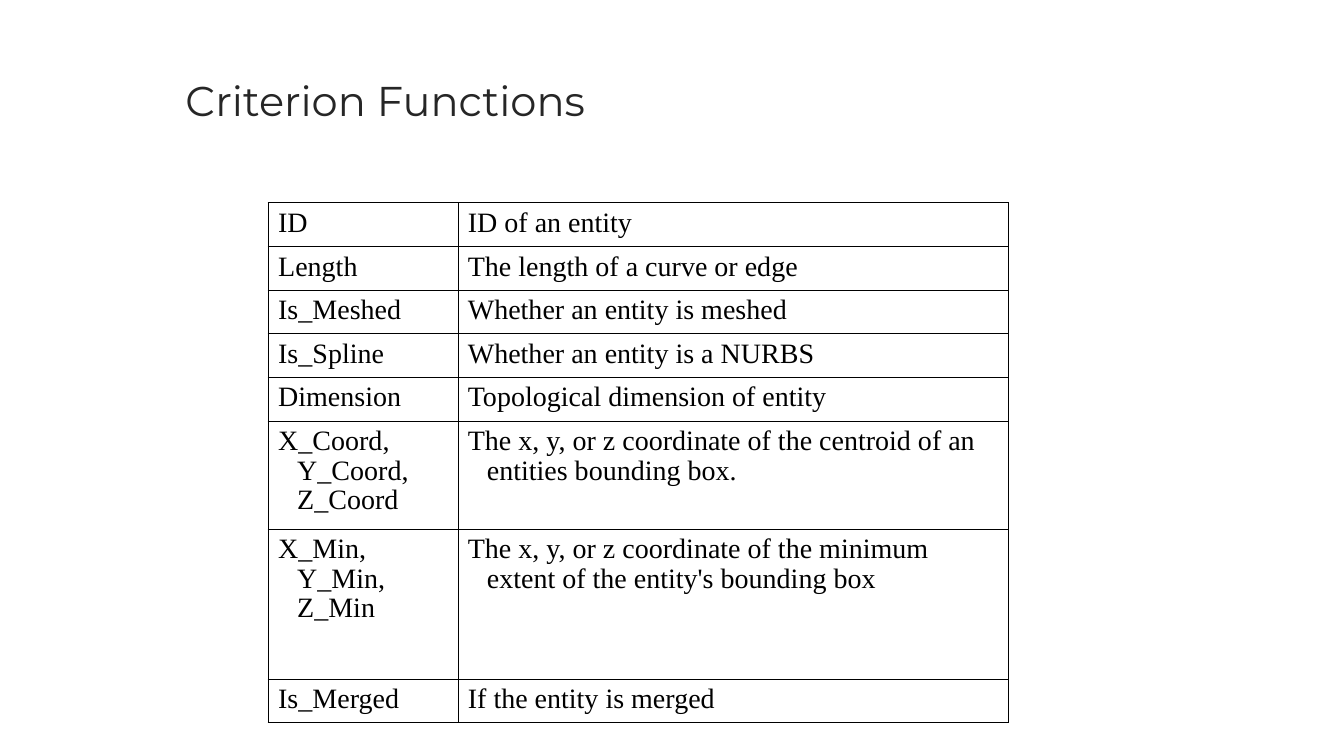
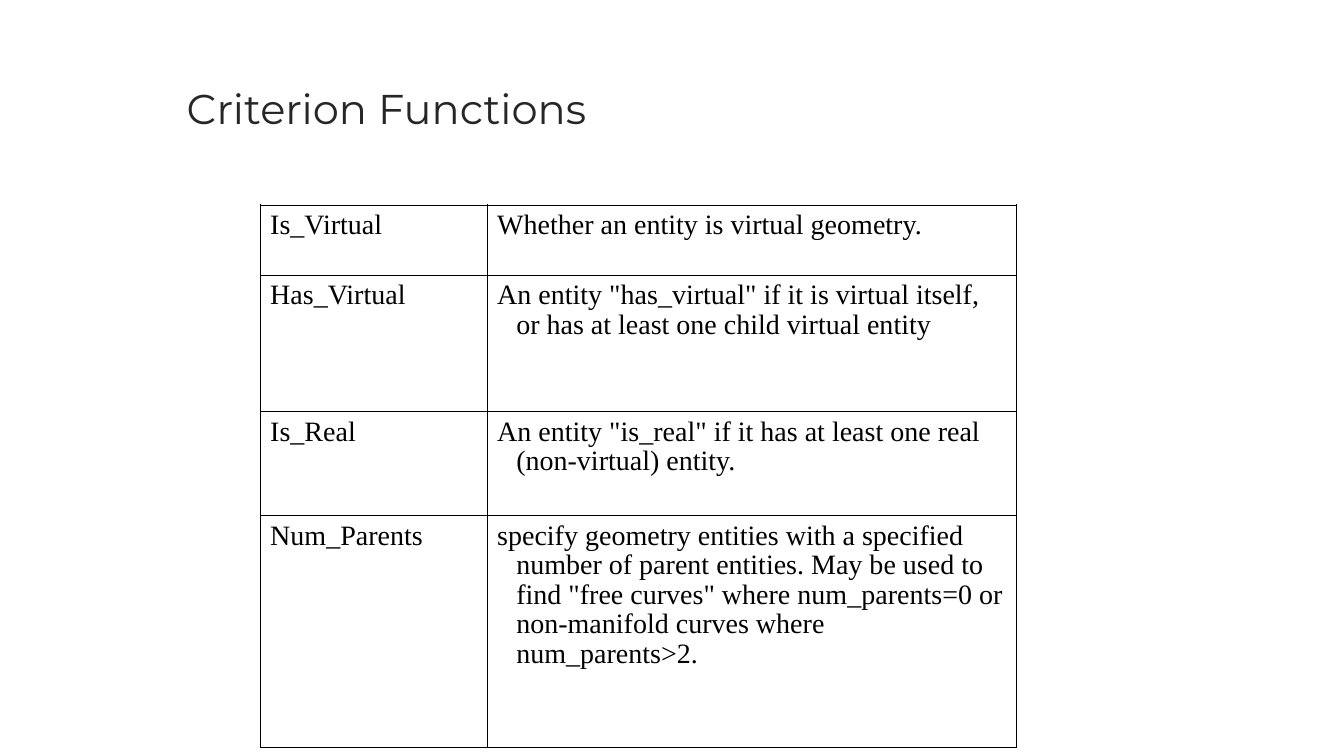
from lxml.etree import SubElement
from pptx import Presentation
from pptx.dml.color import RGBColor
from pptx.enum.text import MSO_ANCHOR, MSO_AUTO_SIZE, PP_ALIGN
from pptx.oxml.ns import qn
from pptx.util import Cm, Pt

TITLE_FONT, TITLE_SIZE, TITLE_COLOR = "Montserrat", 29.7, "262626"
CELL_FONT, CELL_SIZE, CELL_COLOR = "Times New Roman", 20, "000000"
OUTER_LINE, INNER_LINE = 1.08, 0.45
HANGING_INDENT = Cm(0.48)

GENERAL_CRITERIA = [
    ("ID", "ID of an entity", 1.1),
    ("Length", "The length of a curve or edge", 1.1),
    ("Is_Meshed", "Whether an entity is meshed", 1.1),
    ("Is_Spline", "Whether an entity is a NURBS", 1.1),
    ("Dimension", "Topological dimension of entity", 1.1),
    ("X_Coord, Y_Coord, Z_Coord",
     "The x, y, or z coordinate of the centroid of an entities bounding box.", 2.72),
    ("X_Min, Y_Min, Z_Min",
     "The x, y, or z coordinate of the minimum extent of the entity's bounding box", 3.78),
    ("Is_Merged", "If the entity is merged", 1.1),
]
VIRTUAL_CRITERIA = [
    ("Is_Virtual", "Whether an entity is virtual geometry.", 1.77),
    ("Has_Virtual",
     'An entity "has_virtual" if it is virtual itself, '
     "or has at least one child virtual entity", 3.43),
    ("Is_Real", 'An entity "is_real" if it has at least one real (non-virtual) entity.', 2.62),
    ("Num_Parents",
     "specify geometry entities with a specified number of parent entities. "
     'May be used to find "free curves" where num_parents=0 or non-manifold '
     "curves where num_parents>2.", 5.85),
]


def color(value):
    return RGBColor.from_string(value)


def add_run(paragraph, text, font, size, hex_color):
    run = paragraph.add_run()
    run.text = text
    run.font.name = font
    run.font.size = Pt(size)
    run.font.color.rgb = color(hex_color)


def add_title(slide, text, left, top):
    title = slide.shapes.title
    title.left, title.top, title.width, title.height = Cm(left), Cm(top), Cm(18.87), Cm(1.45)
    frame = title.text_frame
    frame.auto_size = MSO_AUTO_SIZE.NONE
    frame.word_wrap = True
    frame.vertical_anchor = MSO_ANCHOR.MIDDLE
    paragraph = frame.paragraphs[0]
    paragraph.alignment = PP_ALIGN.LEFT
    add_run(paragraph, text, TITLE_FONT, TITLE_SIZE, TITLE_COLOR)


def set_borders(cell, outer_sides):
    properties = cell._tc.get_or_add_tcPr()
    for side in "LRTB":
        width = OUTER_LINE if side in outer_sides else INNER_LINE
        border = SubElement(properties, qn(f"a:ln{side}"), w=str(int(Pt(width))))
        fill = SubElement(border, qn("a:solidFill"))
        SubElement(fill, qn("a:srgbClr"), val=CELL_COLOR)


def fill_cell(cell, text, outer_sides):
    cell.margin_left = cell.margin_right = Cm(0.25)
    cell.margin_top, cell.margin_bottom = Cm(0.15), Cm(0.13)
    set_borders(cell, outer_sides)
    cell.fill.background()
    paragraph = cell.text_frame.paragraphs[0]
    paragraph.line_spacing = 0.95
    indent = paragraph._p.get_or_add_pPr()
    indent.set("marL", str(HANGING_INDENT))
    indent.set("indent", str(-HANGING_INDENT))
    add_run(paragraph, text, CELL_FONT, CELL_SIZE, CELL_COLOR)


def add_criteria_table(slide, criteria, left, top, column_widths):
    height = sum(row_height for _, _, row_height in criteria)
    table = slide.shapes.add_table(
        len(criteria), 2, Cm(left), Cm(top), Cm(sum(column_widths)), Cm(height)).table
    table.first_row = table.horz_banding = False
    for column, width in zip(table.columns, column_widths):
        column.width = Cm(width)
    last = len(criteria) - 1
    for index, (name, meaning, row_height) in enumerate(criteria):
        table.rows[index].height = Cm(row_height)
        edges = ("T" if index == 0 else "") + ("B" if index == last else "")
        fill_cell(table.cell(index, 0), name, edges + "L")
        fill_cell(table.cell(index, 1), meaning, edges + "R")


def add_criteria_slide(deck, title_place, criteria, table_place, column_widths):
    slide = deck.slides.add_slide(deck.slide_layouts[5])
    add_title(slide, "Criterion Functions", *title_place)
    add_criteria_table(slide, criteria, *table_place, column_widths)


def main():
    deck = Presentation()
    deck.slide_width, deck.slide_height = Cm(33.87), Cm(19.05)
    add_criteria_slide(deck, (4.42, 1.8), GENERAL_CRITERIA, (6.76, 5.11), (4.78, 13.87))
    add_criteria_slide(deck, (4.45, 2), VIRTUAL_CRITERIA, (6.56, 5.17), (5.72, 13.33))
    deck.save("out.pptx")


if __name__ == "__main__":
    main()
